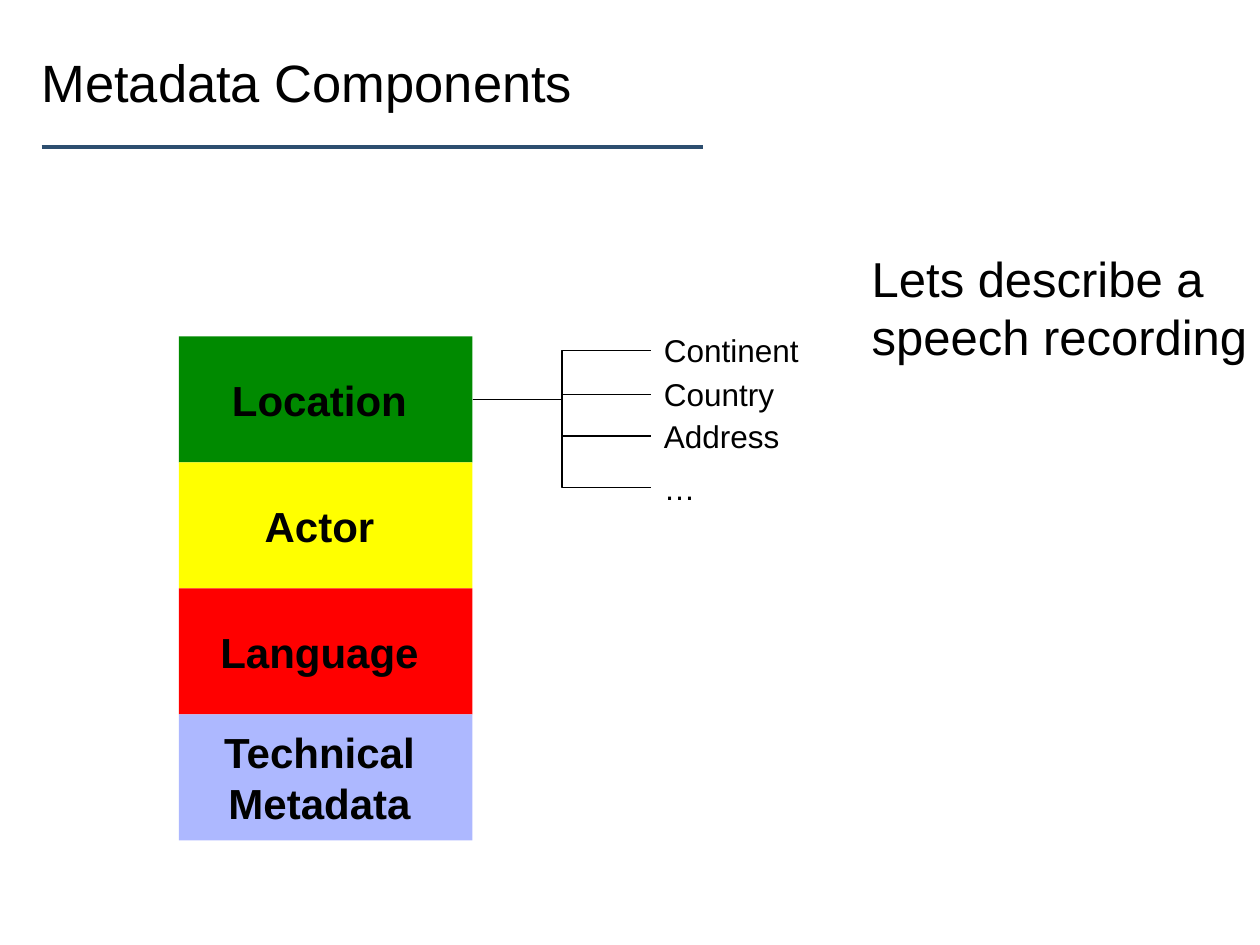
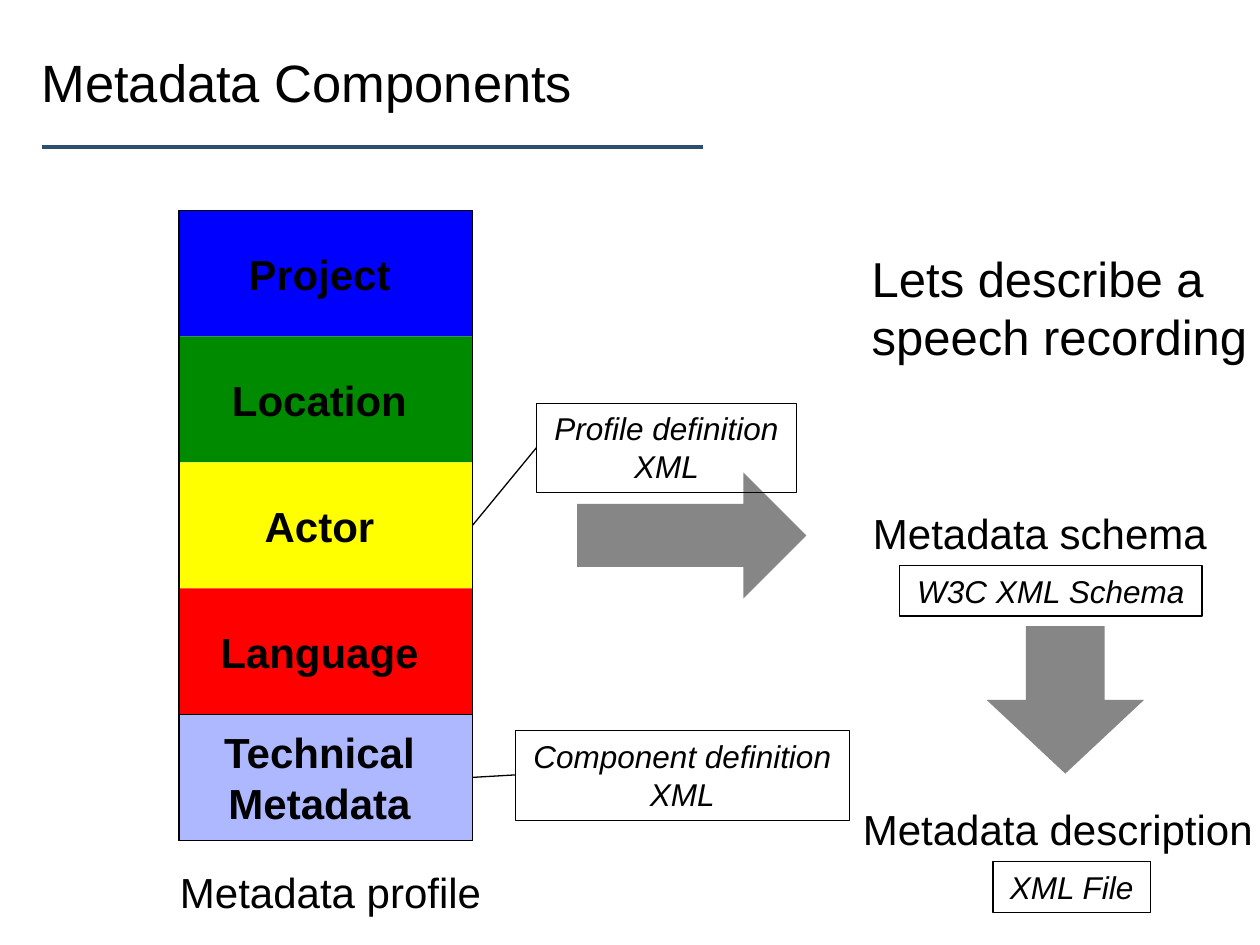
from dataclasses import dataclass

from lxml.etree import SubElement
from pptx import Presentation
from pptx.dml.color import RGBColor
from pptx.enum.shapes import MSO_CONNECTOR, MSO_SHAPE
from pptx.enum.text import MSO_ANCHOR, PP_ALIGN
from pptx.oxml.ns import qn
from pptx.util import Inches, Pt


@dataclass(frozen=True)
class Theme:
    font: str = "Arial"
    ink: str = "000000"
    rule: str = "2D4E6F"
    arrow: str = "868686"
    title_size: int = 30
    lead_size: int = 28
    heading_size: int = 24
    label_size: int = 18
    thin: float = 0.75
    thick: float = 2.25


THEME = Theme()

TITLE = "Metadata Components"
LEAD = "Lets describe a\nspeech recording"

COMPONENTS = [
    ("Project", "0000FF"),
    ("Location", "008A00"),
    ("Actor", "FFFF00"),
    ("Language", "FF0000"),
    ("Technical\nMetadata", "ADB8FF"),
]
LOCATION_FIELDS = [
    ("Continent", 2.58, 1.28),
    ("Country", 2.93, 1.09),
    ("Address", 3.26, 1.14),
    ("…", 3.67, 0.45),
]
HEADINGS = [
    ("Metadata schema", (6.83, 3.98, 2.88, 0.51)),
    ("Metadata description", (6.75, 6.33, 3.33, 0.51)),
    ("Metadata profile", (1.33, 6.83, 2.62, 0.51)),
]
ARROWS = [
    (MSO_SHAPE.RIGHT_ARROW, (4.58, 3.75, 1.82, 1)),
    (MSO_SHAPE.DOWN_ARROW, (7.83, 4.97, 1.25, 1.17)),
]
FORMAT_NOTES = [
    ("Component definition\nXML", (4.09, 5.8, 2.65, 0.71)),
    ("W3C XML Schema", (7.14, 4.49, 2.4, 0.4)),
    ("XML File", (7.88, 6.84, 1.25, 0.4)),
    ("Profile definition\nXML", (4.26, 3.2, 2.06, 0.71)),
]
NOTE_LINKS = [((3.75, 6.17), (4.09, 6.15)), ((3.75, 4.17), (4.26, 3.55))]

STACK_LEFT, STACK_TOP, STACK_WIDTH, BLOCK_HEIGHT = 1.42, 1.67, 2.33, 1
STACK_RIGHT = STACK_LEFT + STACK_WIDTH
FIELD_LEFT, FIELD_HEIGHT = 5.17, 0.4


def write(box, text, size=THEME.label_size, bold=False, italic=False,
          align=PP_ALIGN.LEFT, anchor=MSO_ANCHOR.TOP, wrap=False, left_inset=0.1):
    frame = box.text_frame
    frame.word_wrap = wrap
    frame.vertical_anchor = anchor
    frame.margin_left = Inches(left_inset)
    frame.text = text
    for para in frame.paragraphs:
        para.alignment = align
        for span in para.runs:
            span.font.name = THEME.font
            span.font.size = Pt(size)
            span.font.bold = bold
            span.font.italic = italic
            span.font.color.rgb = RGBColor.from_string(THEME.ink)


def add_text(page, text, area, **style):
    write(page.shapes.add_textbox(*map(Inches, area)), text, **style)


def add_box(page, area, kind=MSO_SHAPE.RECTANGLE, fill=None, line=None):
    box = page.shapes.add_shape(kind, *map(Inches, area))
    box.shadow.inherit = False
    if fill:
        box.fill.solid()
        box.fill.fore_color.rgb = RGBColor.from_string(fill)
    else:
        box.fill.background()
    if line:
        box.line.color.rgb = RGBColor.from_string(line)
        box.line.width = Pt(THEME.thin)
    else:
        box.line.fill.background()
    return box


def add_line(page, start, end, kind=MSO_CONNECTOR.STRAIGHT, color=THEME.ink, width=THEME.thin):
    line = page.shapes.add_connector(kind, *map(Inches, (*start, *end)))
    line.line.color.rgb = RGBColor.from_string(color)
    line.line.width = Pt(width)
    SubElement(line._element.spPr, qn("a:effectLst"))


def add_page(deck):
    page = deck.slides.add_slide(deck.slide_layouts[6])
    add_line(page, (0.33, 1.17), (5.58, 1.17), color=THEME.rule, width=THEME.thick)
    add_text(page, TITLE, (0.33, 0.21, 6.33, 0.88), size=THEME.title_size,
             anchor=MSO_ANCHOR.MIDDLE, wrap=True, left_inset=0)
    add_text(page, LEAD, (6.82, 1.92, 3.21, 1.04), size=THEME.lead_size)
    return page


def add_stack(page, first=0, outlined=()):
    for row, (name, color) in enumerate(COMPONENTS):
        if row < first:
            continue
        area = (STACK_LEFT, STACK_TOP + row * BLOCK_HEIGHT, STACK_WIDTH, BLOCK_HEIGHT)
        box = add_box(page, area, fill=color, line=THEME.ink if row in outlined else None)
        write(box, name, size=THEME.heading_size, bold=True, align=PP_ALIGN.CENTER,
              anchor=MSO_ANCHOR.MIDDLE, wrap=True, left_inset=0)


def build_location_page(deck):
    page = add_page(deck)
    add_stack(page, first=1)
    location_middle = STACK_TOP + 1.5 * BLOCK_HEIGHT
    for name, top, width in LOCATION_FIELDS:
        add_text(page, name, (FIELD_LEFT, top, width, FIELD_HEIGHT))
        add_line(page, (STACK_RIGHT, location_middle),
                 (FIELD_LEFT, top + FIELD_HEIGHT / 2), kind=MSO_CONNECTOR.ELBOW)


def build_profile_page(deck):
    page = add_page(deck)
    add_stack(page, outlined=(len(COMPONENTS) - 1,))
    for kind, area in ARROWS:
        add_box(page, area, kind=kind, fill=THEME.arrow)
    for text, area in HEADINGS:
        add_text(page, text, area, size=THEME.heading_size)
    for text, area in FORMAT_NOTES:
        write(add_box(page, area, line=THEME.ink), text, italic=True, align=PP_ALIGN.CENTER)
    add_box(page, (STACK_LEFT, STACK_TOP, STACK_WIDTH, len(COMPONENTS) * BLOCK_HEIGHT),
            line=THEME.ink)
    for start, end in NOTE_LINKS:
        add_line(page, start, end)


def main():
    deck = Presentation()
    deck.slide_width, deck.slide_height = Inches(10), Inches(7.5)
    build_location_page(deck)
    build_profile_page(deck)
    deck.save("out.pptx")


if __name__ == "__main__":
    main()
